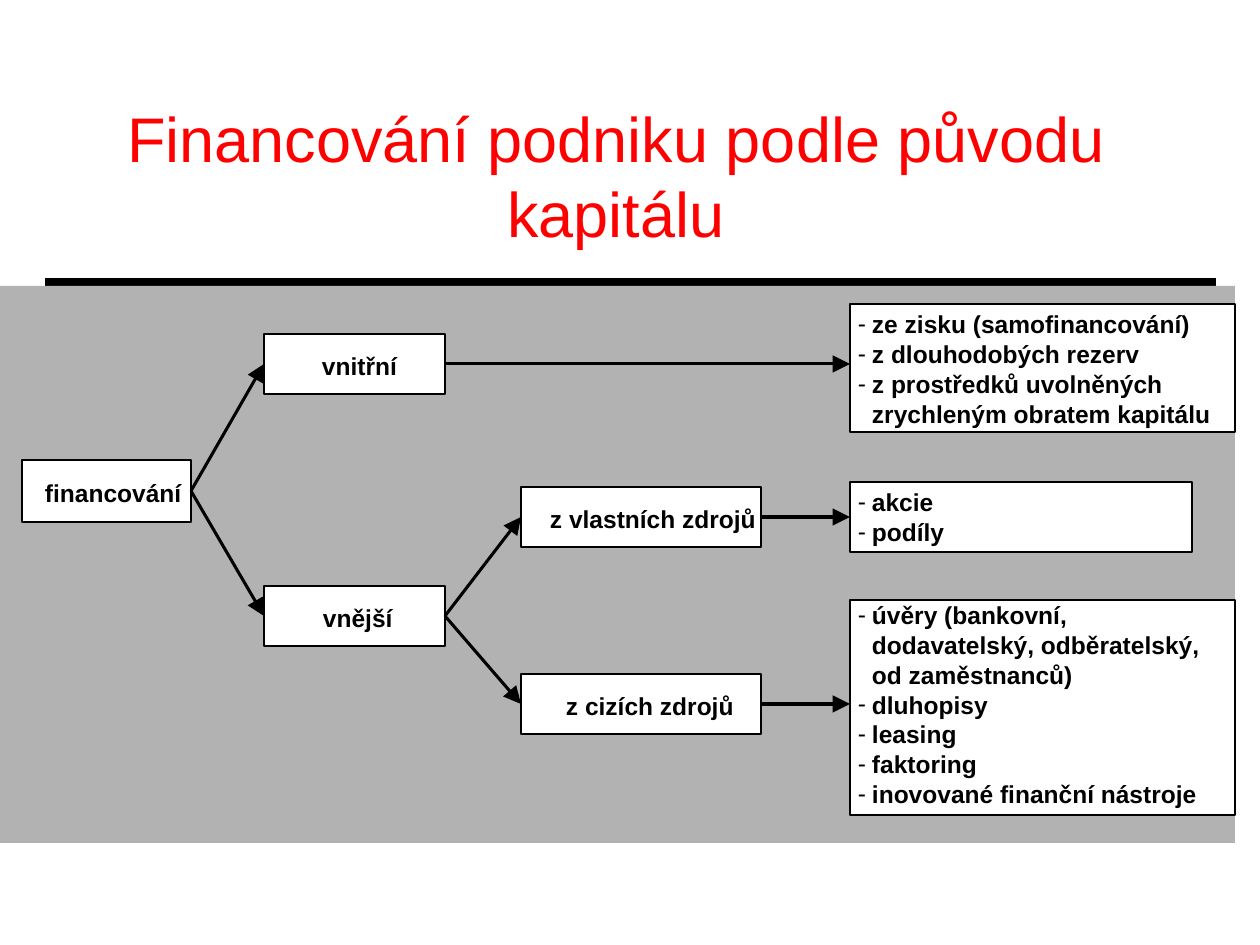
"""Build the slide on company financing by origin of capital."""
from dataclasses import dataclass

from lxml.etree import SubElement
from pptx import Presentation
from pptx.dml.color import RGBColor as Rgb
from pptx.enum.shapes import MSO_CONNECTOR as Connector, MSO_SHAPE as Shape
from pptx.enum.text import MSO_ANCHOR as Anchor, MSO_AUTO_SIZE as AutoSize, PP_ALIGN as Align
from pptx.oxml.ns import qn
from pptx.util import Emu, Pt

PX_PER_INCH = 126
RIGHT, LEFT = 3, 1


@dataclass(frozen=True)
class Theme:
    """Colours, font and sizes of the slide."""
    ink: Rgb = Rgb(0, 0, 0)
    paper: Rgb = Rgb(255, 255, 255)
    panel: Rgb = Rgb(0xB2, 0xB2, 0xB2)
    title: Rgb = Rgb(255, 0, 0)
    face: str = "Arial"
    title_size: Pt = Pt(36)
    body_size: Pt = Pt(14)
    leading: Pt = Pt(17)
    border: Pt = Pt(0)
    arrow: Pt = Pt(1.75)
    rule: Pt = Pt(6)


THEME = Theme()
HANG = 14

NODES = {
    "financování": (22, 460, 169, 62, 23),
    "vnitřní": (264, 334, 181, 60, 58),
    "vnější": (264, 586, 181, 60, 59),
    "z vlastních zdrojů": (521, 487, 240, 60, 29),
    "z cizích zdrojů": (521, 674, 240, 60, 45),
}
BRANCHES = [
    ("financování", "vnitřní"),
    ("financování", "vnější"),
    ("vnější", "z vlastních zdrojů"),
    ("vnější", "z cizích zdrojů"),
]
SOURCES = {
    "vnitřní": ((850, 304, 385, 128), 5, [
        "ze zisku (samofinancování)",
        "z dlouhodobých rezerv",
        "z prostředků uvolněných\nzrychleným obratem kapitálu",
    ]),
    "z vlastních zdrojů": ((850, 482, 342, 70), 5, ["akcie", "podíly"]),
    "z cizích zdrojů": ((850, 600, 385, 215), 0, [
        "úvěry (bankovní,\ndodavatelský, odběratelský,\nod zaměstnanců)",
        "dluhopisy",
        "leasing",
        "faktoring",
        "inovované finanční nástroje",
    ]),
}


def px(length):
    """Turn slide pixels into EMU."""
    return Emu(round(length * 914400 / PX_PER_INCH))


def apply(target, formats):
    """Set each format value on the target."""
    for name, value in formats.items():
        setattr(target, name, value)


def style_runs(paragraph, size, color, bold):
    """Give every run of a paragraph its type style."""
    for run in paragraph.runs:
        apply(run.font, {"name": THEME.face, "size": size, "bold": bold})
        run.font.color.rgb = color


def add_title(slide, text):
    """Place and format the title placeholder."""
    title = slide.shapes.title
    apply(title, {"left": px(49), "top": px(96), "width": px(1134), "height": px(158)})
    frame = title.text_frame
    apply(frame, {"text": text, "word_wrap": True, "auto_size": AutoSize.NONE,
                  "vertical_anchor": Anchor.MIDDLE})
    heading = frame.paragraphs[0]
    heading.alignment = Align.CENTER
    style_runs(heading, THEME.title_size, THEME.title, False)


def add_box(slide, bounds, fill, outlined=True):
    """Add a filled rectangle, with a thin border if outlined."""
    box = slide.shapes.add_shape(Shape.RECTANGLE, *map(px, bounds))
    box.shadow.inherit = False
    box.fill.solid()
    box.fill.fore_color.rgb = fill
    if outlined:
        box.line.color.rgb = THEME.ink
        box.line.width = THEME.border
    else:
        box.line.fill.background()
    return box


def set_frame(box, left, top, anchor):
    """Set the text margins and anchor of a box."""
    apply(box.text_frame, {"word_wrap": True, "vertical_anchor": anchor,
                           "margin_left": px(left), "margin_top": px(top),
                           "margin_right": 0, "margin_bottom": 0})
    return box.text_frame


def add_node(slide, label, bounds, indent):
    """Add a labelled box of the tree."""
    node = add_box(slide, bounds, THEME.paper)
    paragraph = set_frame(node, indent, 4, Anchor.MIDDLE).paragraphs[0]
    apply(paragraph, {"text": label, "alignment": Align.LEFT})
    style_runs(paragraph, THEME.body_size, THEME.ink, True)
    return node


def add_list(slide, bounds, top, items):
    """Add a box with a dashed list of capital sources."""
    box = add_box(slide, bounds, THEME.paper)
    frame = set_frame(box, 8, top, Anchor.TOP)
    for index, item in enumerate(items):
        paragraph = frame.add_paragraph() if index else frame.paragraphs[0]
        apply(paragraph, {"text": item.replace("\n", "\v"), "alignment": Align.LEFT,
                          "line_spacing": THEME.leading})
        properties = paragraph._p.get_or_add_pPr()
        properties.set("marL", str(px(HANG)))
        properties.set("indent", str(-px(HANG)))
        SubElement(properties, qn("a:buFont"), typeface=THEME.face)
        SubElement(properties, qn("a:buChar"), char="-")
        style_runs(paragraph, THEME.body_size, THEME.ink, True)
    return box


def add_line(slide, start, end, width):
    """Add a plain black straight line."""
    line = slide.shapes.add_connector(Connector.STRAIGHT, *start, *end)
    line.line.color.rgb = THEME.ink
    line.line.width = width
    SubElement(line._element.spPr, qn("a:effectLst"))
    return line


def link(slide, source, target):
    """Draw an arrow from one box to the next, level when both lie side by side."""
    source_middle = source.top + source.height // 2
    target_middle = target.top + target.height // 2
    offset = abs(target_middle - source_middle)
    level = 0 < offset < px(10)
    end = (target.left, source_middle if level else target_middle)
    arrow = add_line(slide, (source.left + source.width, source_middle), end, THEME.arrow)
    arrow.begin_connect(source, RIGHT)
    if not level:
        arrow.end_connect(target, LEFT)
    SubElement(arrow.line._get_or_add_ln(), qn("a:tailEnd"), type="triangle", w="lg", len="lg")


def main():
    """Build and save the slide."""
    deck = Presentation()
    apply(deck, {"slide_width": px(1260), "slide_height": px(945)})
    slide = deck.slides.add_slide(deck.slide_layouts[5])
    add_title(slide, "Financování podniku podle původu kapitálu")
    add_line(slide, (px(45), px(283)), (px(1216), px(283)), THEME.rule)
    add_box(slide, (-1, 286, 1236, 557), THEME.panel, outlined=False)
    nodes = {label: add_node(slide, label, bounds, indent)
             for label, (*bounds, indent) in NODES.items()}
    for parent, child in BRANCHES:
        link(slide, nodes[parent], nodes[child])
    for label, (bounds, top, items) in SOURCES.items():
        link(slide, nodes[label], add_list(slide, bounds, top, items))
    deck.save("out.pptx")


if __name__ == "__main__":
    main()
